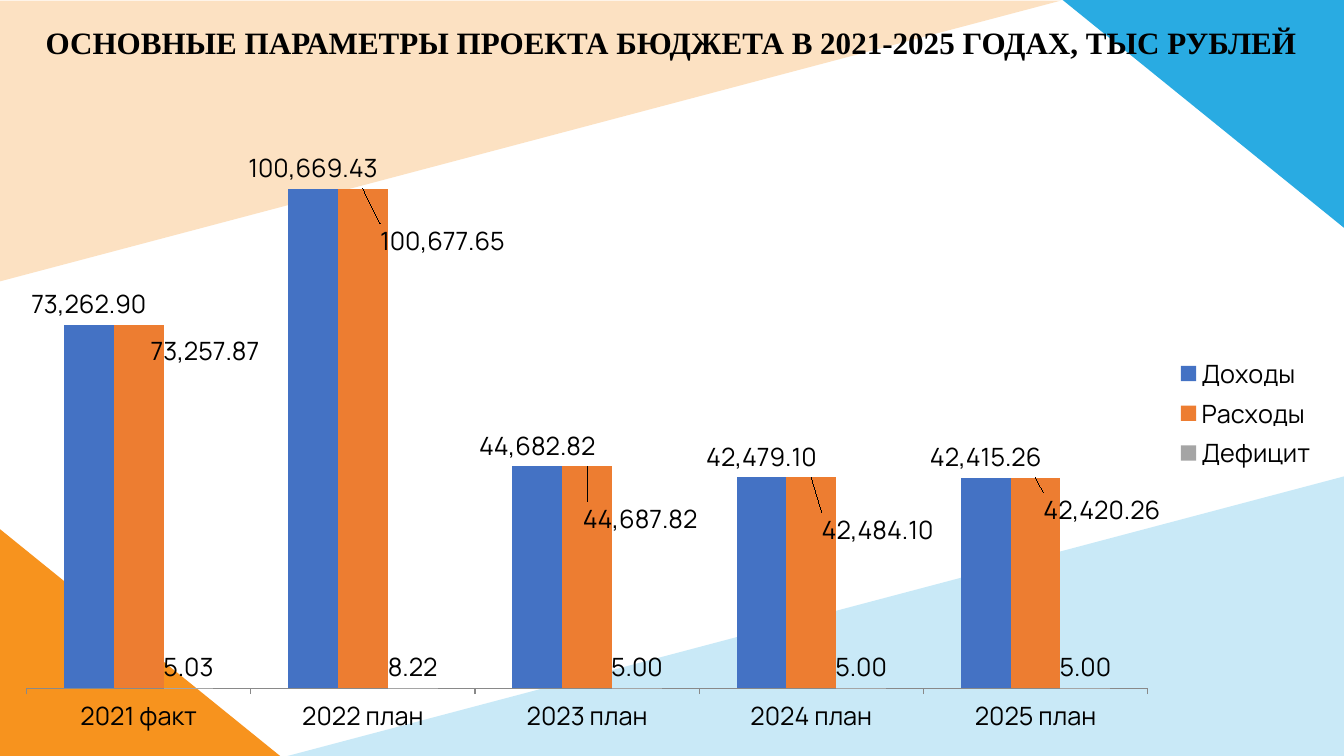
from lxml import etree
from pptx import Presentation
from pptx.chart.data import CategoryChartData
from pptx.dml.color import RGBColor
from pptx.enum.chart import (
    XL_CHART_TYPE as ChartType,
    XL_LABEL_POSITION as LabelPosition,
    XL_LEGEND_POSITION as LegendPosition,
    XL_TICK_LABEL_POSITION as TickLabels,
    XL_TICK_MARK as TickMark,
)
from pptx.enum.shapes import MSO_SHAPE as Shape
from pptx.enum.text import PP_ALIGN as Align
from pptx.oxml import parse_xml
from pptx.oxml.ns import nsdecls, qn
from pptx.util import Inches, Pt

NUMBER_FORMAT = "#,##0.00"
YEARS = ["2021 факт", "2022 план", "2023 план", "2024 план", "2025 план"]
BUDGET = [
    ("Доходы", "4472C4", [73262.9, 100669.43, 44682.82, 42479.1, 42415.26]),
    ("Расходы", "ED7D31", [73257.87, 100677.65, 44687.82, 42484.1, 42420.26]),
    ("Дефицит", "A5A5A5", [5.03, 8.22, 5, 5, 5]),
]
EXPENSE_LABEL_SHIFTS = [(0.05, 0.07), (0.06, 0.11), (0.04, 0.11), (0.05, 0.11), (0.05, 0.08)]
CORNERS = [
    (3.86, -3.87, 2.79, 10.54, 90, "F7931E", 27),
    (0, 5.25, 2.79, 2.26, 0, "F7931E", 100),
    (10.54, 0, 2.79, 2.26, 180, "29ABE2", 100),
    (6.67, 0.85, 2.79, 10.54, 270, "29ABE2", 25),
]


def color(value):
    return RGBColor.from_string(value)


def add_corner(page, left, top, width, height, rotation, fill, opacity):
    corner = page.shapes.add_shape(
        Shape.RIGHT_TRIANGLE, Inches(left), Inches(top), Inches(width), Inches(height)
    )
    corner.rotation = rotation
    corner.shadow.inherit = False
    corner.line.fill.background()
    corner.fill.solid()
    corner.fill.fore_color.rgb = color(fill)
    if opacity < 100:
        tone = corner.fill._xPr.find(".//" + qn("a:srgbClr"))
        etree.SubElement(tone, qn("a:alpha")).set("val", str(opacity * 1000))


def add_title(page, text):
    box = page.shapes.add_textbox(Inches(0.13), Inches(0.17), Inches(13.06), Inches(0.76))
    frame = box.text_frame
    frame.word_wrap = True
    frame.margin_left = frame.margin_right = Inches(0.1)
    frame.margin_top = frame.margin_bottom = Inches(0.1)
    para = frame.paragraphs[0]
    para.text = text
    para.alignment = Align.CENTER
    para.line_spacing = 0.9
    para.space_before = Pt(4.8)
    para.font.name = "Times New Roman"
    para.font.size = Pt(22.2)
    para.font.bold = True
    para.font.color.rgb = color("000000")


def make_layout(**settings):
    items = "".join(f'<c:{name} val="{value}"/>' for name, value in settings.items())
    return parse_xml(
        f'<c:layout {nsdecls("c")}><c:manualLayout>{items}</c:manualLayout></c:layout>'
    )


def place_plot(chart):
    area = chart._chartSpace.chart.plotArea
    for layout in area.findall(qn("c:layout")):
        area.remove(layout)
    area.insert(0, make_layout(
        layoutTarget="inner", xMode="edge", yMode="edge", x=0.02, y=0.02, w=0.845, h=0.892
    ))


def shift_label(point, across, down):
    point.data_label.position = LabelPosition.OUTSIDE_END
    label = point.data_label._dLbl
    label.insert(1, make_layout(x=across, y=down))
    label.insert(2, parse_xml(
        f'<c:numFmt {nsdecls("c")} formatCode="{NUMBER_FORMAT}" sourceLinked="0"/>'
    ))


def style_series(series, fill):
    series.format.fill.solid()
    series.format.fill.fore_color.rgb = color(fill)
    labels = series.data_labels
    labels.show_value = True
    labels.number_format = NUMBER_FORMAT
    labels.number_format_is_linked = False
    labels.position = LabelPosition.OUTSIDE_END


def add_budget_chart(page):
    data = CategoryChartData(number_format=NUMBER_FORMAT)
    data.categories = YEARS
    for name, _, values in BUDGET:
        data.add_series(name, values)
    chart = page.shapes.add_chart(
        ChartType.COLUMN_CLUSTERED, Inches(0), Inches(0.79), Inches(13.16), Inches(6.62), data
    ).chart
    chart.has_title = False
    chart.font.name = "Manrope"
    chart.font.size = Pt(18)
    chart.font.color.rgb = color("000000")
    chart.has_legend = True
    chart.legend.position = LegendPosition.RIGHT
    chart.legend.include_in_layout = False
    place_plot(chart)

    values_axis = chart.value_axis
    values_axis.visible = False
    values_axis.has_major_gridlines = False
    values_axis.minimum_scale = 0
    values_axis.maximum_scale = 120000
    values_axis.tick_labels.number_format = NUMBER_FORMAT
    values_axis.tick_labels.number_format_is_linked = False
    years_axis = chart.category_axis
    years_axis.major_tick_mark = TickMark.OUTSIDE
    years_axis.tick_label_position = TickLabels.LOW
    years_axis.format.line.color.rgb = color("898989")

    plot = chart.plots[0]
    plot.gap_width = 150
    plot.overlap = 0
    plot.vary_by_categories = False
    for series, (_, fill, _) in zip(plot.series, BUDGET):
        style_series(series, fill)
    for index, shift in enumerate(EXPENSE_LABEL_SHIFTS):
        shift_label(plot.series[1].points[index], *shift)


def main():
    deck = Presentation()
    deck.slide_width = Inches(13.33)
    deck.slide_height = Inches(7.5)
    page = deck.slides.add_slide(deck.slide_layouts[6])
    for corner in CORNERS:
        add_corner(page, *corner)
    add_title(page, "ОСНОВНЫЕ ПАРАМЕТРЫ ПРОЕКТА БЮДЖЕТА В 2021-2025 ГОДАХ, ТЫС РУБЛЕЙ")
    add_budget_chart(page)
    deck.save("out.pptx")


if __name__ == "__main__":
    main()
